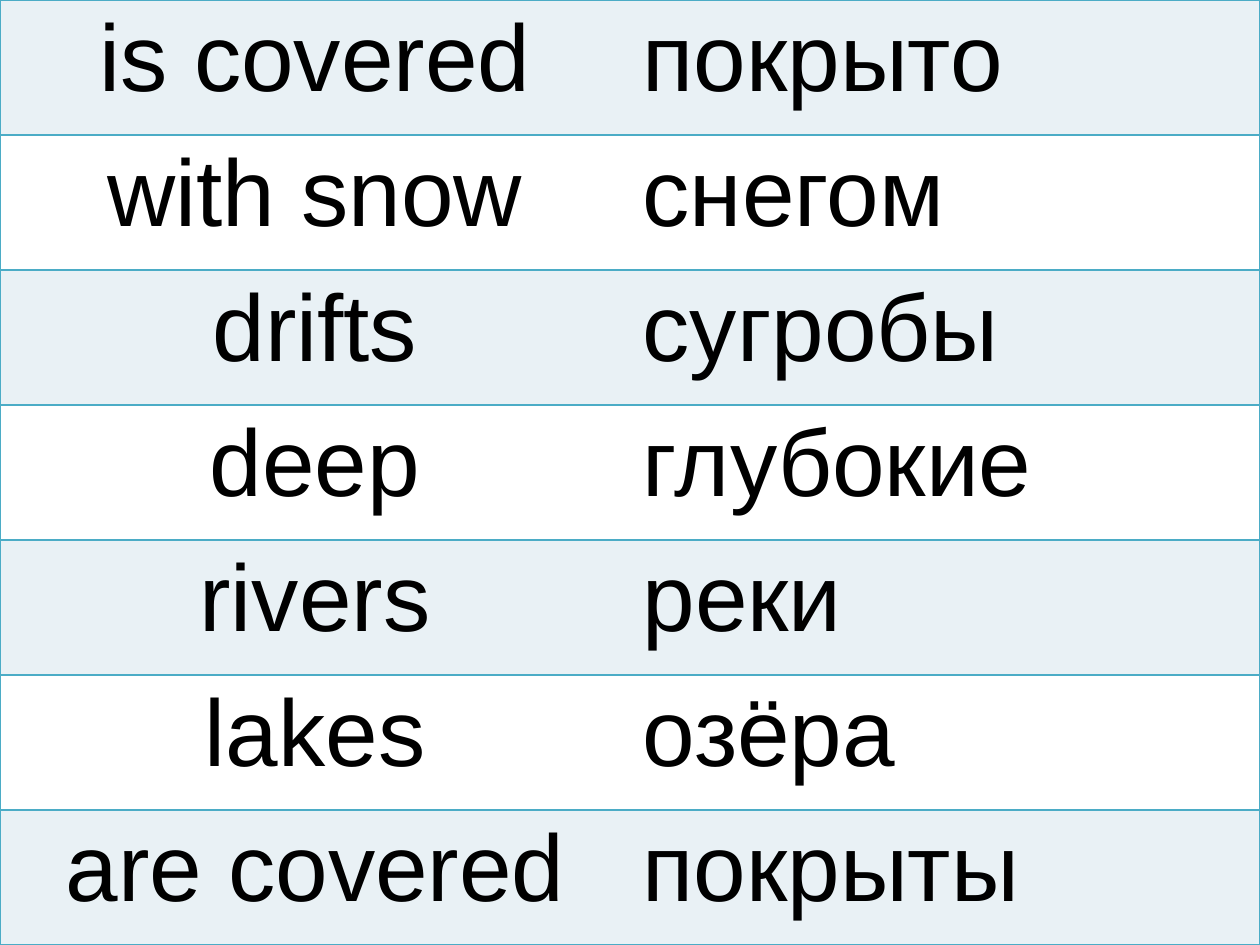
"""Build a vocabulary slide: a full-slide English-Russian word table."""
import pptx
import pptx.dml.color
import pptx.enum.text
import pptx.oxml
import pptx.oxml.ns
import pptx.util
from pptx.util import Inches

WORDS = [
    ("is covered", "покрыто"),
    ("with snow", "снегом"),
    ("drifts", "сугробы"),
    ("deep", "глубокие"),
    ("rivers", "реки"),
    ("lakes", "озёра"),
    ("are covered", "покрыты"),
]
BAND_FILLS = ["E9F1F5", "FFFFFF"]
BORDER = "4BACC6"
ALIGNMENTS = [pptx.enum.text.PP_ALIGN.CENTER, pptx.enum.text.PP_ALIGN.LEFT]
OUTER_SIDES = ["LTB", "RTB"]


def rgb(value):
    return pptx.dml.color.RGBColor.from_string(value)


def set_borders(cell, visible):
    tc_pr = cell._tc.get_or_add_tcPr()
    for side in "LRTB":
        if side in visible:
            paint = f'<a:solidFill><a:srgbClr val="{BORDER}"/></a:solidFill>'
        else:
            paint = "<a:noFill/>"
        tc_pr.append(pptx.oxml.parse_xml(
            f'<a:ln{side} {pptx.oxml.ns.nsdecls("a")} w="{pptx.util.Pt(1)}">'
            f"{paint}</a:ln{side}>"))


prs = pptx.Presentation()
prs.slide_width, prs.slide_height = Inches(10), Inches(7.5)
s = prs.slides.add_slide(prs.slide_layouts[6])

table = s.shapes.add_table(
    len(WORDS), 2, Inches(0), Inches(0), prs.slide_width, prs.slide_height).table
table.first_row = False
table.horz_banding = False

for row, pair in enumerate(WORDS):
    for col, word in enumerate(pair):
        cell = table.cell(row, col)
        set_borders(cell, OUTER_SIDES[col])
        cell.fill.solid()
        cell.fill.fore_color.rgb = rgb(BAND_FILLS[row % 2])
        p = cell.text_frame.paragraphs[0]
        p.alignment = ALIGNMENTS[col]
        r = p.add_run()
        r.text = word
        r.font.name = "Arial"
        r.font.size = pptx.util.Pt(54)
        r.font.color.rgb = rgb("000000")

prs.save("out.pptx")
